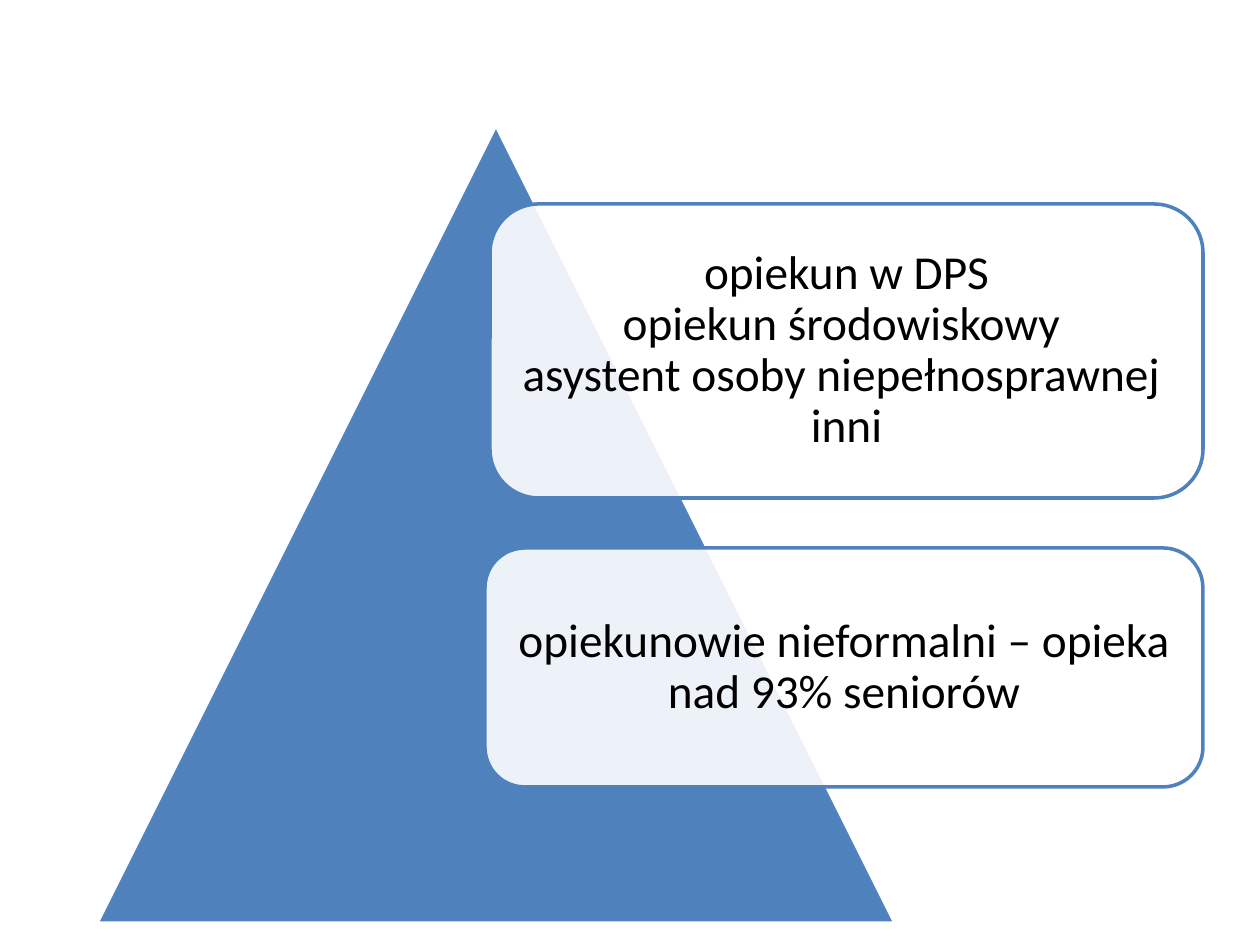
from dataclasses import dataclass

from lxml import etree
from pptx import Presentation
from pptx.dml.color import RGBColor
from pptx.enum.shapes import MSO_SHAPE
from pptx.enum.text import MSO_ANCHOR, PP_ALIGN
from pptx.oxml.ns import qn
from pptx.util import Emu, Pt

TRIANGLE = MSO_SHAPE.ISOSCELES_TRIANGLE
ROUNDED = MSO_SHAPE.ROUNDED_RECTANGLE
MIDDLE = MSO_ANCHOR.MIDDLE
CENTER = PP_ALIGN.CENTER

BLUE = RGBColor(0x4F, 0x81, 0xBD)
WHITE = RGBColor(0xFF, 0xFF, 0xFF)
BLACK = RGBColor(0x00, 0x00, 0x00)

PX_PER_INCH = 126
CARD_RIGHT = 1203


def px(length: int) -> Emu:
    return Emu(round(length * 914400 / PX_PER_INCH))


@dataclass
class Card:
    left: int
    top: int
    height: int
    text: str


CARDS = [
    Card(490, 204, 294, "opiekun w DPS\vopiekun środowiskowy \v"
                        "asystent osoby niepełnosprawnej \vinni"),
    Card(485, 548, 239, "opiekunowie nieformalni – opieka nad 93% seniorów"),
]


def add_outlined_shape(slide, kind, left: int, top: int, width: int, height: int,
                       fill: RGBColor, line: RGBColor):
    shape = slide.shapes.add_shape(kind, px(left), px(top), px(width), px(height))
    shape.shadow.inherit = False
    shape.fill.solid()
    shape.fill.fore_color.rgb = fill
    shape.line.color.rgb = line
    shape.line.width = Pt(2)
    return shape


def set_opacity(shape, percent: int) -> None:
    color = shape.fill._xPr.find(qn("a:solidFill"))[0]
    etree.SubElement(color, qn("a:alpha"), val=str(percent * 1000))


def add_card(slide, card: Card) -> None:
    shape = add_outlined_shape(slide, ROUNDED, card.left, card.top,
                               CARD_RIGHT - card.left, card.height, WHITE, BLUE)
    set_opacity(shape, 90)

    # The rounded corners already inset the text
    frame = shape.text_frame
    frame.margin_left = frame.margin_right = 0
    frame.margin_top = frame.margin_bottom = 0
    frame.word_wrap = True
    frame.vertical_anchor = MIDDLE
    frame.text = card.text
    paragraph = frame.paragraphs[0]
    paragraph.alignment = CENTER
    paragraph.line_spacing = 0.9
    for run in paragraph.runs:
        run.font.name = "Calibri"
        run.font.size = Pt(27)
        run.font.color.rgb = BLACK


def main() -> None:
    presentation = Presentation()
    presentation.slide_width = px(1260)
    presentation.slide_height = px(945)
    slide = presentation.slides.add_slide(presentation.slide_layouts[6])

    # Pyramid behind the cards
    add_outlined_shape(slide, TRIANGLE, 97, 125, 798, 798, BLUE, WHITE)

    # Caregiver groups
    for card in CARDS:
        add_card(slide, card)

    presentation.save("out.pptx")


if __name__ == "__main__":
    main()
